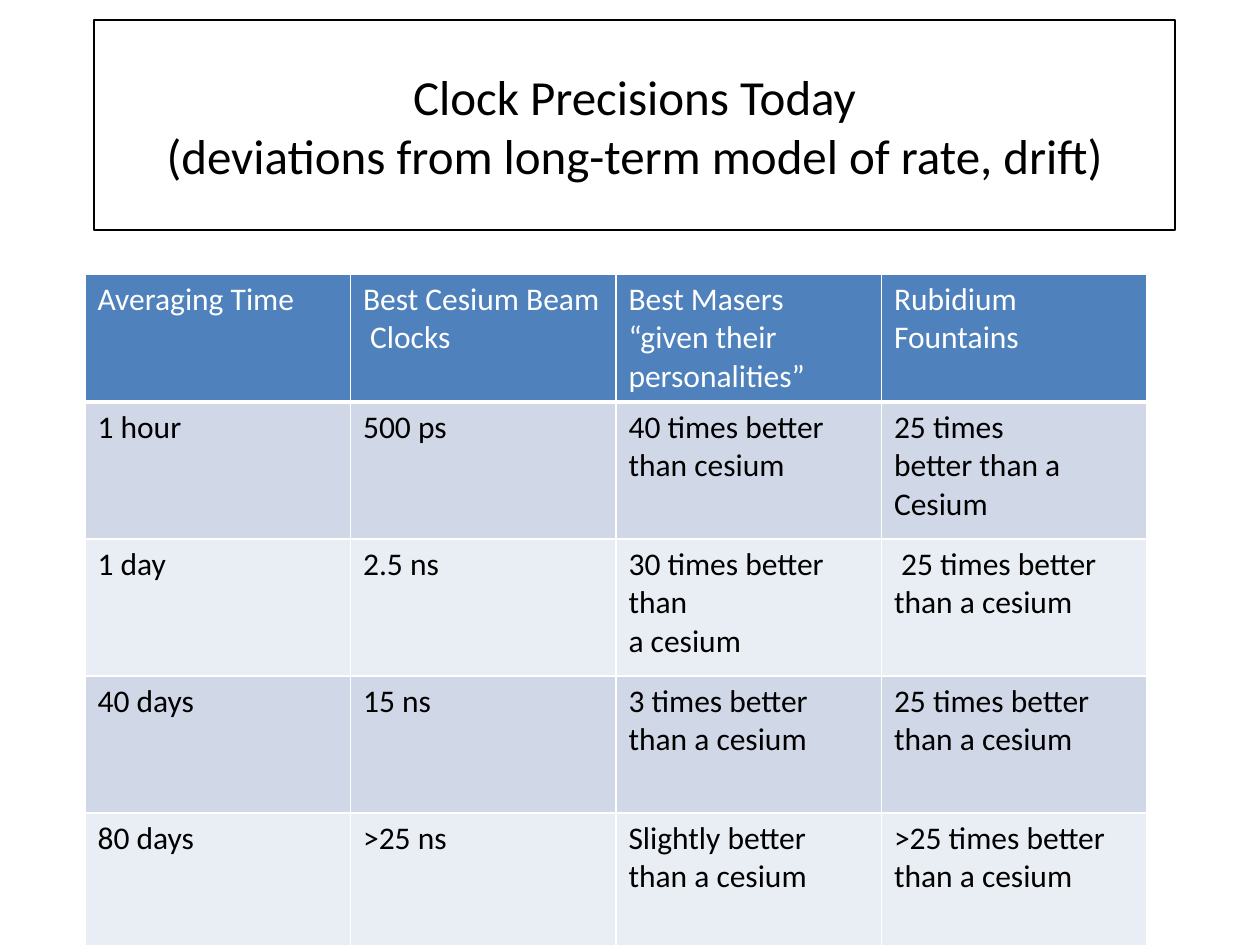
"""Build the slide that compares the precision of atomic clocks."""
from dataclasses import dataclass

import lxml.etree
import pptx
import pptx.dml.color
import pptx.enum.shapes
import pptx.enum.text
import pptx.oxml.ns
import pptx.util

EMU_PER_PX = 914400 / 126
FONT = "Calibri"
BLACK = pptx.dml.color.RGBColor(0x00, 0x00, 0x00)
WHITE = pptx.dml.color.RGBColor(0xFF, 0xFF, 0xFF)
HEADER_BLUE = pptx.dml.color.RGBColor(0x4F, 0x81, 0xBD)
BAND_DARK = pptx.dml.color.RGBColor(0xD0, 0xD8, 0xE8)
BAND_LIGHT = pptx.dml.color.RGBColor(0xE9, 0xED, 0xF4)

TITLE = "Clock Precisions Today\v(deviations from long-term model of rate, drift)"
HEADER_HEIGHT = 127
ROW_HEIGHT = 137


@dataclass(frozen=True)
class Area:
    left: int
    top: int
    width: int
    height: int

    def emu(self) -> list[pptx.util.Emu]:
        return [px(n) for n in (self.left, self.top, self.width, self.height)]


@dataclass(frozen=True)
class ClockRow:
    averaging_time: str
    cesium: str
    maser: str
    rubidium: str

    def texts(self) -> tuple[str, ...]:
        return self.averaging_time, self.cesium, self.maser, self.rubidium


CLOCK_ROWS = [
    ClockRow("Averaging Time", "Best Cesium Beam  Clocks",
             "Best Masers\n“given their personalities”", "Rubidium\nFountains"),
    ClockRow("1 hour", "500 ps", "40 times better than cesium",
             "25 times\nbetter than a\nCesium"),
    ClockRow("1 day", "2.5 ns", "30 times better than\na cesium",
             " 25 times better than a cesium"),
    ClockRow("40 days", "15 ns", "3 times better than a cesium",
             "25 times better than a cesium"),
    ClockRow("80 days", ">25 ns", "Slightly better than a cesium",
             ">25 times better than a cesium"),
]
TITLE_AREA = Area(94, 20, 1081, 210)
TABLE_AREA = Area(85, 274, 1062, HEADER_HEIGHT + ROW_HEIGHT * (len(CLOCK_ROWS) - 1))


def px(length: int) -> pptx.util.Emu:
    return pptx.util.Emu(round(length * EMU_PER_PX))


def format_text(frame, size: int, color: pptx.dml.color.RGBColor, align) -> None:
    for para in frame.paragraphs:
        para.alignment = align
        for span in para.runs:
            span.font.name = FONT
            span.font.size = pptx.util.Pt(size)
            span.font.bold = False
            span.font.color.rgb = color


def add_title(page, area: Area, text: str) -> None:
    box = page.shapes.add_shape(pptx.enum.shapes.MSO_SHAPE.RECTANGLE, *area.emu())
    box.shadow.inherit = False
    box.fill.background()
    box.line.color.rgb = BLACK
    box.line.width = pptx.util.Pt(0.75)
    frame = box.text_frame
    frame.word_wrap = True
    frame.vertical_anchor = pptx.enum.text.MSO_ANCHOR.MIDDLE
    frame.text = text
    format_text(frame, 28, BLACK, pptx.enum.text.PP_ALIGN.CENTER)


def add_borders(cell, bottom_points: int) -> None:
    properties = cell._tc.get_or_add_tcPr()
    qn = pptx.oxml.ns.qn
    for side, points in (("L", 1), ("R", 1), ("T", 1), ("B", bottom_points)):
        border = lxml.etree.SubElement(
            properties, qn(f"a:ln{side}"), w=str(pptx.util.Pt(points)))
        fill = lxml.etree.SubElement(border, qn("a:solidFill"))
        lxml.etree.SubElement(fill, qn("a:srgbClr"), val=str(WHITE))


def add_clock_table(page, area: Area, rows: list[ClockRow]) -> None:
    column_count = len(rows[0].texts())
    table = page.shapes.add_table(len(rows), column_count, *area.emu()).table
    for column in table.columns:
        column.width = px(area.width) // column_count
    for index, clock_row in enumerate(rows):
        header = index == 0
        table.rows[index].height = px(HEADER_HEIGHT if header else ROW_HEIGHT)
        band = BAND_DARK if index % 2 else BAND_LIGHT
        for cell, text in zip(table.rows[index].cells, clock_row.texts()):
            add_borders(cell, 3 if header else 1)
            cell.fill.solid()
            cell.fill.fore_color.rgb = HEADER_BLUE if header else band
            cell.text_frame.text = text
            format_text(cell.text_frame, 18, WHITE if header else BLACK,
                        pptx.enum.text.PP_ALIGN.LEFT)


def main() -> None:
    deck = pptx.Presentation()
    deck.slide_width, deck.slide_height = px(1260), px(945)
    page = deck.slides.add_slide(deck.slide_layouts[6])
    add_title(page, TITLE_AREA, TITLE)
    add_clock_table(page, TABLE_AREA, CLOCK_ROWS)
    deck.save("out.pptx")


if __name__ == "__main__":
    main()
